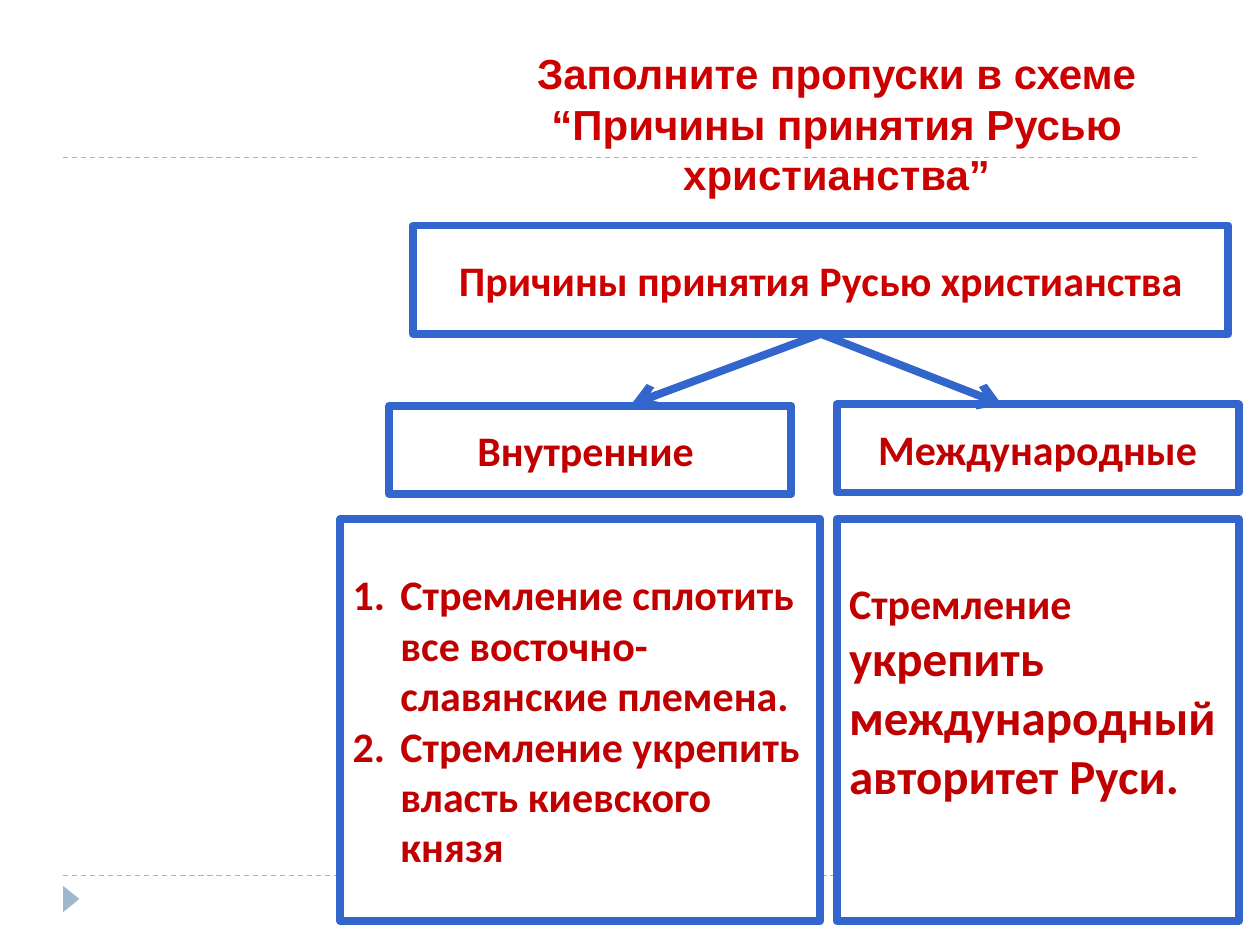
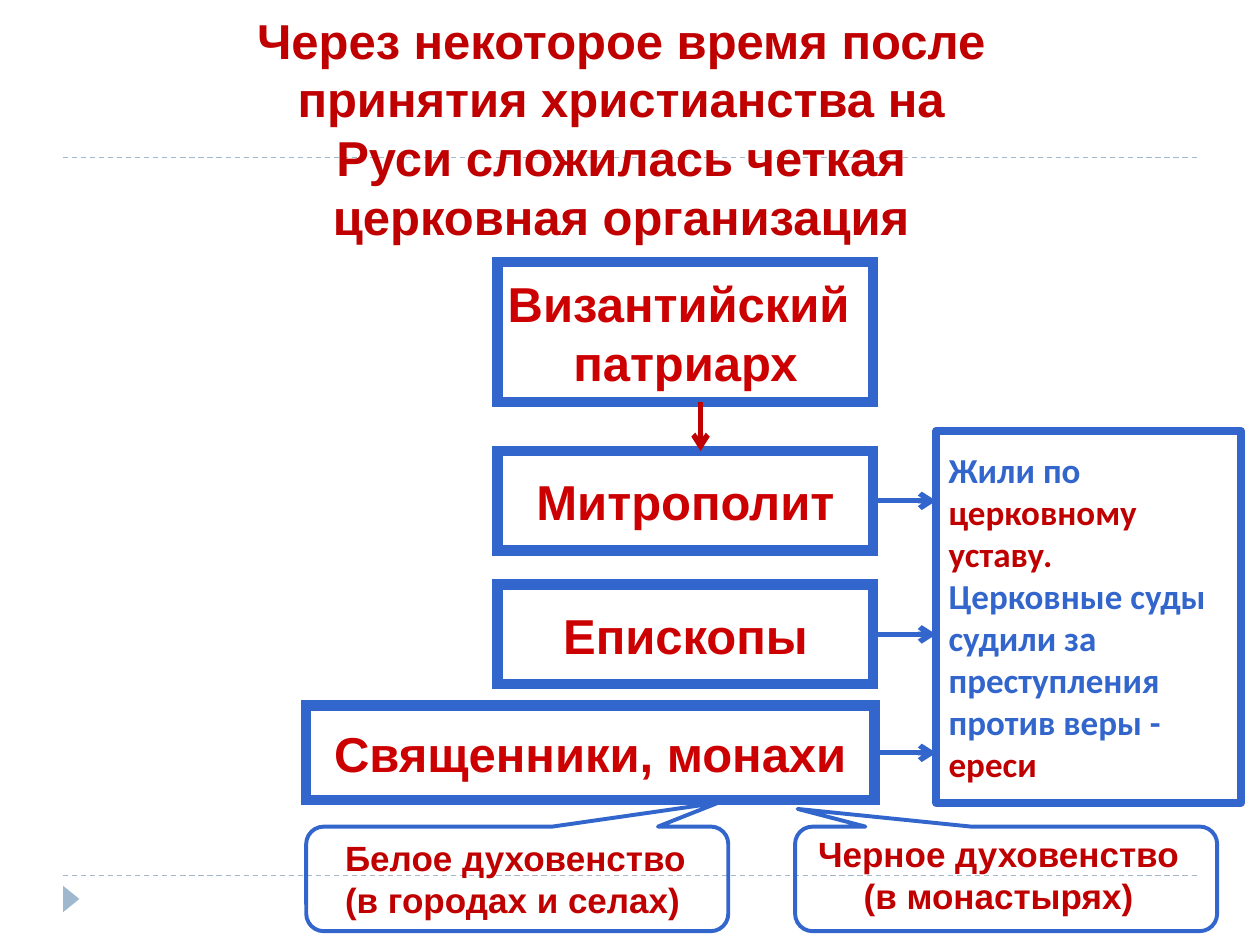
from typing import NamedTuple

from pptx import Presentation
from pptx.dml.color import RGBColor
from pptx.enum.dml import MSO_LINE
from pptx.enum.shapes import MSO_CONNECTOR, MSO_SHAPE
from pptx.enum.text import MSO_ANCHOR, MSO_AUTO_SIZE, PP_ALIGN
from pptx.oxml.ns import qn
from pptx.util import Inches, Pt
from lxml.etree import SubElement

COLS, ROWS = 100, 75
CELL = Inches(0.1)
BOTTOM, RIGHT = 2, 3


class Theme:
    """Colours, fonts, type sizes and line widths of the deck."""
    blue, red, dark = "3366CC", "CC0000", "C00000"
    pale, white = "9FB8CD", "FFFFFF"
    sans, body = "Arial", "Calibri"
    small, mid, big = 20, 24, 28
    hair, thin, arrow, bold, thick = 0.75, 2.25, 3, 4.5, 6


class Look(NamedTuple):
    """Type style of a run."""
    font: str
    size: int
    color: str


class Box(NamedTuple):
    """A rectangle in grid cells."""
    x: float
    y: float
    w: float
    h: float

    def at(self, x, y, w, h):
        """Return a part placed from this box's corner."""
        return Box(self.x + x, self.y + y, w, h)

    def emu(self):
        """Return the four lengths in EMU."""
        return [round(v * CELL) for v in self]


HEAD = Look(Theme.sans, Theme.big, Theme.red)
ITEM = Look(Theme.body, Theme.mid, Theme.dark)
ROOT = ITEM._replace(color=Theme.red)
NOTE = Look(Theme.sans, Theme.small, Theme.dark)
RULE = Look(Theme.body, Theme.small, Theme.blue)
KEY = RULE._replace(color=Theme.dark)


def tint(part, color):
    """Give a fill or line one solid colour."""
    part.fill.solid() if hasattr(part, "fill") else part.solid()
    fore = part.fill.fore_color if hasattr(part, "fill") else part.fore_color
    fore.rgb = RGBColor.from_string(color)


def write(frame, paras, align=PP_ALIGN.CENTER, wrap=True, number=False):
    """Fill a frame with paragraphs, each a list of (text, look) runs."""
    frame.word_wrap = wrap
    for i, runs in enumerate(paras):
        para = frame.add_paragraph() if i else frame.paragraphs[0]
        para.alignment = align
        if number:
            props = para._p.get_or_add_pPr()
            indent = Inches(0.38)
            props.set("marL", str(indent))
            props.set("indent", str(-indent))
            SubElement(props, qn("a:buAutoNum"), type="arabicPeriod")
        for text, look in runs:
            run = para.add_run()
            run.text = text
            font = run.font
            font.name, font.size, font.bold = look.font, Pt(look.size), True
            font.color.rgb = RGBColor.from_string(look.color)


def form(slide, kind, box, fill=None, edge=None, width=Theme.bold):
    """Add a preset shape with its fill and edge."""
    shape = slide.shapes.add_shape(kind, *box.emu())
    shape.shadow.inherit = False
    if fill:
        tint(shape.fill, fill)
    else:
        shape.fill.background()
    if edge:
        tint(shape.line, edge)
        shape.line.width = Pt(width)
    else:
        shape.line.fill.background()
    return shape


def panel(slide, box, paras, **opts):
    """Add a white framed box with text."""
    shape = form(slide, MSO_SHAPE.RECTANGLE, box, Theme.white, Theme.blue)
    shape.text_frame.vertical_anchor = MSO_ANCHOR.MIDDLE
    write(shape.text_frame, paras, **opts)
    return shape


def rank(slide, box, *lines):
    """Add a clear box with a thick, sharp edge for one church rank."""
    shape = form(slide, MSO_SHAPE.RECTANGLE, box, None, Theme.blue, Theme.thick)
    SubElement(shape.line._get_or_add_ln(), qn("a:miter"), lim="800000")
    shape.text_frame.vertical_anchor = MSO_ANCHOR.MIDDLE
    write(shape.text_frame, [[(line, HEAD)] for line in lines], wrap=False)
    return shape


def stroke(slide, start, end, color, width):
    """Add a straight line between two grid points."""
    ends = [round(v * CELL) for v in (*start, *end)]
    line = slide.shapes.add_connector(MSO_CONNECTOR.STRAIGHT, *ends)
    tint(line.line, color)
    line.line.width = Pt(width)
    SubElement(line.element.spPr, qn("a:effectLst"))
    return line


def arrow(slide, start, end, color=Theme.blue, width=Theme.arrow, join=None):
    """Add an arrow, joined at its start to a (shape, side) if given."""
    line = stroke(slide, start, end, color, width)
    SubElement(line.line._get_or_add_ln(), qn("a:tailEnd"), type="arrow")
    if join:
        line.begin_connect(*join)


def decor(deck, slide):
    """Draw the dashed rules and corner mark and move them to the master."""
    parts = []
    for y in (12.5, 69.5):
        rule = stroke(slide, (5, y), (COLS - 5, y), Theme.pale, Theme.hair)
        rule.line.dash_style = MSO_LINE.DASH
        parts.append(rule)
    mark = form(slide, MSO_SHAPE.ISOSCELES_TRIANGLE,
                Box(4.6, 70.7, 2.1, 1.3), Theme.pale)
    mark.rotation = 90
    tree = deck.slide_master.shapes.element
    for i, part in enumerate([*parts, mark], 50):
        part.element.xpath(".//p:cNvPr")[0].set("id", str(i))
        tree.append(part.element)


def start(deck, box, text, look):
    """Add a slide and set its title in the box."""
    slide = deck.slides.add_slide(deck.slide_layouts[5])
    title = slide.shapes.title
    title.left, title.top, title.width, title.height = box.emu()
    frame = title.text_frame
    frame.auto_size = MSO_AUTO_SIZE.NONE
    frame.vertical_anchor = MSO_ANCHOR.TOP
    write(frame, [[(text, look)]])
    return slide


def causes(slide, box):
    """Place the tree of causes: root, two branches and their details."""
    right, wide, low, tall = 39.4, 31.9, 23.3, 31.9
    top = panel(slide, box.at(5.8, 0, 64.7, 8.6),
                [[("Причины принятия Русью христианства", ROOT)]])
    panel(slide, box.at(3.9, 14.3, wide, 7), [[("Внутренние ", ITEM)]])
    panel(slide, box.at(right, 14.2, wide, 7), [[("Международные", ITEM)]])
    panel(slide, box.at(0, low, 38.1, tall),
          [[("Стремление сплотить все восточно-славянские племена.", ITEM)],
           [("Стремление укрепить власть киевского князя", ITEM)]],
          align=PP_ALIGN.LEFT, number=True)
    aim = panel(slide, box.at(right, low, wide, tall),
                [[("Стремление ", ITEM),
                  ("укрепить международный авторитет Руси.",
                   ITEM._replace(size=Theme.big))]], align=PP_ALIGN.LEFT)
    aim.text_frame.margin_bottom = Inches(0.52)
    for x in (23.1, 52.5):
        arrow(slide, box.at(38.1, 8.6, 0, 0)[:2], box.at(x, 14.2, 0, 0)[:2],
              width=Theme.bold, join=(top, BOTTOM))


def ranks(slide, box):
    """Place the church ranks, the rules beside them and their arrows."""
    left, wide, tall = 15.2, 29.8, 7.9
    rank(slide, box.at(left, 0, wide, 11.1), "Византийский ", "патриарх")
    rows = [("Митрополит", box.at(left, 15, wide, tall)),
            ("Епископы", box.at(left, 25.6, wide, tall)),
            ("Священники, монахи", box.at(0, 35.2, 45.1, 7.5))]
    side = box.at(50, 13.4, 24.2, 29.5)
    panel(slide, side,
          [[("Жили по ", RULE), ("церковному уставу.", KEY)],
           [("Церковные суды судили за преступления против веры - ", RULE),
            ("ереси", KEY)]], align=PP_ALIGN.LEFT)
    for name, cell in rows:
        shape = rank(slide, cell, name)
        y = cell.y + cell.h / 2
        arrow(slide, (cell.x + cell.w, y), (side.x, y), join=(shape, RIGHT))
    arrow(slide, box.at(31.3, 11.1, 0, 0)[:2], box.at(31.3, 15, 0, 0)[:2],
          Theme.dark)


def clergy(slide, box):
    """Place the two callouts on the kinds of clergy."""
    notes = [(0, (-0.476, 0.728), (2.1, 0.3, 29.3, 7.7), PP_ALIGN.LEFT,
              ("Белое духовенство", "(в городах и селах)")),
             (38.8, (0.494, 0.669), (39.5, 0, 30.9, 7.7), PP_ALIGN.CENTER,
              ("Черное духовенство", "(в монастырях)"))]
    for x, tip, area, align, lines in notes:
        shape = form(slide, MSO_SHAPE.ROUNDED_RECTANGULAR_CALLOUT,
                     box.at(x, 0, 33.5, box.h), None, Theme.blue, Theme.thin)
        shape.rotation = 180
        for i, value in enumerate((*tip, 0.167)):
            shape.adjustments[i] = value
        text = slide.shapes.add_textbox(*box.at(*area).emu())
        text.text_frame.auto_size = MSO_AUTO_SIZE.SHAPE_TO_FIT_TEXT
        write(text.text_frame, [[(line, NOTE)] for line in lines],
              align=align, wrap=False)


def main():
    """Build and save the deck."""
    deck = Presentation()
    deck.slide_width, deck.slide_height = COLS * CELL, ROWS * CELL
    first = start(deck, Box(41.4, 3.3, 50, 13.1),
                  "Заполните пропуски в схеме “Причины принятия Русью "
                  "христианства”", HEAD._replace(size=Theme.mid))
    decor(deck, first)
    causes(first, Box(27, 17.9, 71.3, 55.2))
    second = start(deck, Box(19.3, 0.3, 60, 19.9),
                   "Через некоторое время после принятия христианства на "
                   "Руси сложилась четкая церковная организация",
                   HEAD._replace(color=Theme.dark))
    ranks(second, Box(24.3, 20.8, 74.2, 42.9))
    clergy(second, Box(24.3, 65.6, 72.3, 8.3))
    deck.save("out.pptx")


if __name__ == "__main__":
    main()
